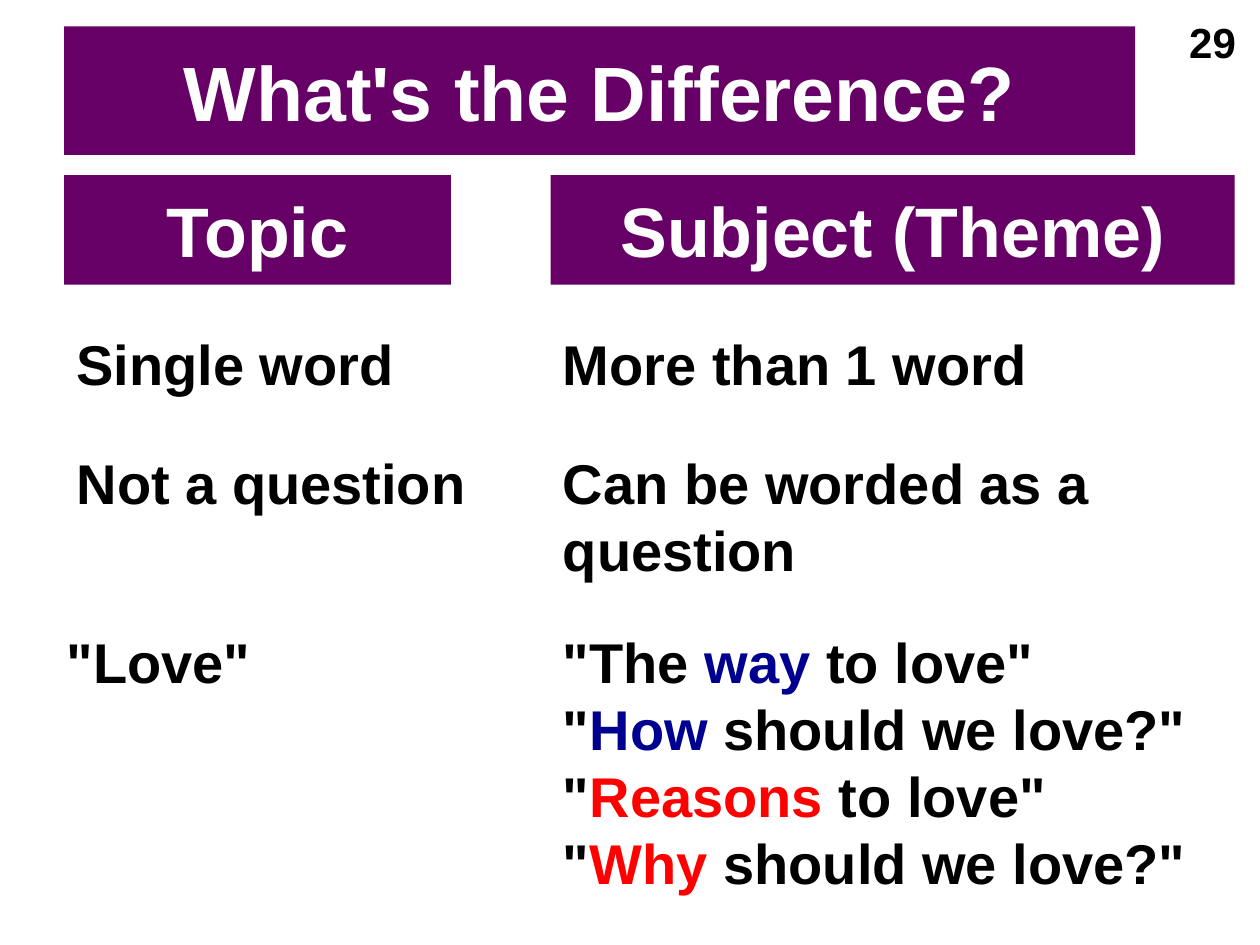
from typing import NamedTuple

from pptx import Presentation
from pptx.dml.color import RGBColor
from pptx.enum.shapes import MSO_SHAPE
from pptx.enum.text import MSO_ANCHOR, MSO_AUTO_SIZE, PP_ALIGN
from pptx.util import Inches, Pt

PURPLE, WHITE, BLACK = "660066", "FFFFFF", "000000"
BLUE, RED = "000090", "FF0000"
LEFT, RIGHT = 0.51, 4.37
ROW_1, ROW_2, ROW_3 = 2.57, 3.51, 4.93
HEADER_TOP, HEADER_HEIGHT = 1.39, 0.87


class Run(NamedTuple):
    text: str
    color: str = BLACK


class Box(NamedTuple):
    left: float
    top: float
    width: float
    height: float


class Entry(NamedTuple):
    box: Box
    lines: list[list[Run]]
    wrap: bool = False
    size: int = 32


def rgb(color: str) -> RGBColor:
    return RGBColor.from_string(color)


def quote(before: str, key: str, after: str, color: str) -> list[Run]:
    """One quoted line with its key word coloured."""
    return [Run(before), Run(key, color), Run(after)]


def add_runs(p, runs: list[Run], size: int) -> None:
    for run in runs:
        r = p.add_run()
        r.text = run.text
        r.font.name = "Arial"
        r.font.size = Pt(size)
        r.font.bold = True
        r.font.color.rgb = rgb(run.color)


def format_banner(sp, text: str, size: int) -> None:
    """Purple fill with centred white text."""
    sp.fill.solid()
    sp.fill.fore_color.rgb = rgb(PURPLE)
    sp.line.fill.background()
    tf = sp.text_frame
    tf.word_wrap = True
    tf.auto_size = MSO_AUTO_SIZE.NONE
    tf.vertical_anchor = MSO_ANCHOR.MIDDLE
    p = tf.paragraphs[0]
    p.alignment = PP_ALIGN.CENTER
    add_runs(p, [Run(text, WHITE)], size)


def add_title(slide, box: Box, text: str) -> None:
    sp = slide.shapes.title
    sp.left, sp.top, sp.width, sp.height = map(Inches, box)
    format_banner(sp, text, 44)


def add_header(slide, left: float, width: float, text: str) -> None:
    box = Box(left, HEADER_TOP, width, HEADER_HEIGHT)
    sp = slide.shapes.add_shape(MSO_SHAPE.RECTANGLE, *map(Inches, box))
    sp.shadow.inherit = False
    format_banner(sp, text, 40)


def add_entry(slide, entry: Entry) -> None:
    tf = slide.shapes.add_textbox(*map(Inches, entry.box)).text_frame
    tf.word_wrap = entry.wrap
    tf.auto_size = MSO_AUTO_SIZE.SHAPE_TO_FIT_TEXT
    for i, runs in enumerate(entry.lines):
        p = tf.add_paragraph() if i else tf.paragraphs[0]
        add_runs(p, runs, entry.size)


ENTRIES = [
    Entry(Box(9.34, 0.08, 0.57, 0.5), [[Run("29")]], size=24),
    Entry(Box(LEFT, ROW_1, 2.74, 0.64), [[Run("Single word")]]),
    Entry(Box(RIGHT, ROW_1, 5.63, 0.64), [[Run("More than 1 word")]], wrap=True),
    Entry(Box(LEFT, ROW_2, 3.32, 0.64), [[Run("Not a question")]]),
    Entry(Box(RIGHT, ROW_2, 5.63, 1.18), [[Run("Can be worded as a question")]], wrap=True),
    Entry(Box(0.43, ROW_3, 1.68, 0.64), [[Run('"Love"')]]),
    Entry(Box(RIGHT, ROW_3, 5.63, 2.26), [
        quote('"The ', "way", ' to love"', BLUE),
        quote('"', "How", ' should we love?"', BLUE),
        quote('"', "Reasons", ' to love"', RED),
        quote('"', "Why", ' should we love?"', RED),
    ], wrap=True),
]


def main() -> None:
    prs = Presentation()
    prs.slide_width, prs.slide_height = Inches(10), Inches(7.5)
    slide = prs.slides.add_slide(prs.slide_layouts[5])
    add_title(slide, Box(LEFT, 0.21, 8.5, 1.02), "What's the Difference?")
    add_header(slide, RIGHT, 5.43, "Subject (Theme)")
    add_header(slide, LEFT, 3.07, "Topic")
    for entry in ENTRIES:
        add_entry(slide, entry)
    prs.save("out.pptx")


if __name__ == "__main__":
    main()
